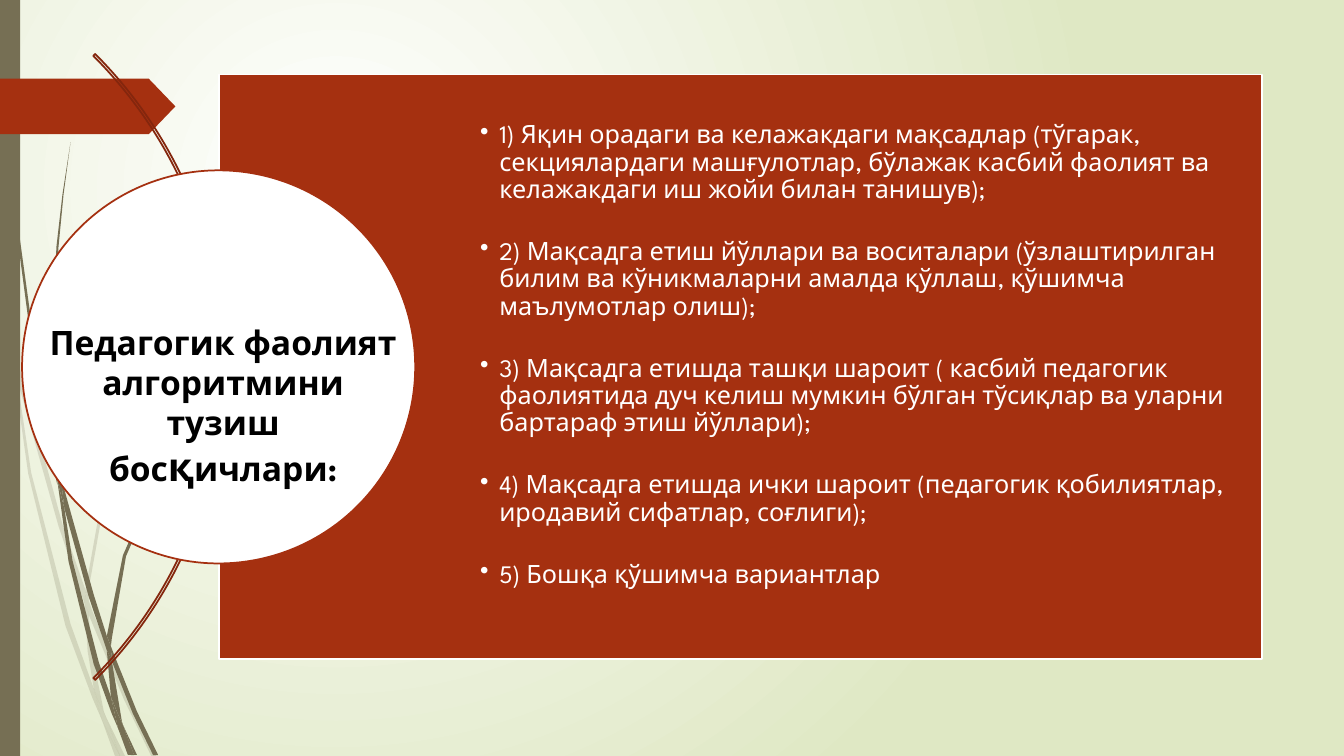
from pptx import Presentation
from pptx.dml.color import RGBColor as Rgb
from pptx.enum.shapes import MSO_SHAPE as Kind
from pptx.enum.text import MSO_ANCHOR as Anchor, MSO_AUTO_SIZE as Fit, PP_ALIGN as Align
from pptx.oxml import parse_xml
from pptx.oxml.ns import nsdecls, qn
from pptx.util import Pt

HUES = {"white": "FFFFFF", "black": "000000", "lime": "DFE8C4",
        "olive": "766F54", "rust": "A53010", "dark": "84260D"}
FACE = "League Spartan"

STEPS = [
    "1) Яқин орадаги ва келажакдаги мақсадлар (тўгарак, секциялардаги машғулотлар, бўлажак касбий фаолият ва келажакдаги иш жойи билан танишув);",
    "2) Мақсадга етиш йўллари ва воситалари (ўзлаштирилган билим ва кўникмаларни амалда қўллаш, қўшимча маълумотлар олиш);",
    "3) Мақсадга етишда ташқи шароит ( касбий педагогик фаолиятида дуч келиш мумкин бўлган тўсиқлар ва уларни бартараф этиш йўллари);",
    "4) Мақсадга етишда ички шароит (педагогик қобилиятлар, иродавий сифатлар, соғлиги);",
    "5) Бошқа қўшимча вариантлар",
]
HEAD = [
    [("Педагогик фаолият", 24)],
    [("алгоритмини тузиш", 24)],
    [("бос", 24), ("қ", 28), ("ичлари:", 24)],
]

PALE = [
    [(7.9, 252), (6.5, 231.8), (0, 203), (0, 215.3), (7.2, 247.7)],
    [(41.8, 375.8), (60.5, 431.3), (61.2, 421.9), (44.6, 374.4), (10.1, 248.4), (12.2, 270.7)],
    [(66.2, 437), (63.4, 429.1), (63.4, 439.2), (88.6, 499.7), (108, 540), (111.6, 540), (91.4, 498.2)],
    [(85.7, 540), (89.3, 540), (75.6, 511.9)],
    [(67, 491.8), (50.4, 445.7), (22.3, 337.7), (12.2, 270.7), (7.9, 252), (20.2, 338.4),
     (46.8, 447.1), (66.2, 499), (72.7, 514.1), (71.3, 509)],
    [(60.5, 431.3), (62.6, 465.1), (67, 491.8), (69.1, 498.2), (75.6, 511.9), (74.2, 508.3),
     (65.5, 465.1), (63.4, 439.2), (63.4, 437.8)],
    [(63.4, 420.5), (79.2, 332.6), (115.2, 251.3), (164.9, 176.4), (193, 142.6), (208.8, 126),
     (224.6, 110.9), (224.6, 110.2), (208.1, 126), (193, 141.8), (164.2, 175.7), (113.8, 250.6),
     (77, 331.9), (61.2, 420.5), (61.2, 421.9), (63.4, 429.1)],
    [(72.7, 514.1), (82.1, 540), (85.7, 540)],
    [(63.4, 437.8), (63.4, 439.2), (63.4, 429.1), (61.2, 421.9), (60.5, 431.3)],
    [(69.1, 498.2), (67, 491.8), (71.3, 509), (72.7, 514.1), (85.7, 540), (75.6, 511.9)],
]
DEEP = [
    [(5, 79.2), (12.2, 167.8), (23.8, 255.6), (40.3, 343.4), (41, 346.3), (39.6, 329),
     (39.6, 326.2), (25.9, 255.6), (13.7, 167), (5.8, 78.5), (3.6, 34.6), (2.9, 0), (2.2, 0), (2.9, 34.6)],
    [(63.4, 426.2), (76.3, 464.4), (76.3, 454.3), (67, 424.8), (43.2, 339.8), (46.1, 363.6)],
    [(81.4, 467.3), (79.2, 461.5), (79.9, 472.3), (95, 509.8), (109.4, 539.3), (113, 539.3), (97.9, 508.3)],
    [(79.2, 497.5), (70.6, 473), (51.8, 400.3), (46.1, 363.6), (41, 343.4), (49, 401),
     (67, 474.5), (79.9, 509.8), (84.2, 519.8), (83.5, 516.2)],
    [(43.2, 339.8), (41.8, 326.2), (38.9, 251.3), (41.8, 176.4), (45.4, 139), (50.4, 101.5),
     (44.6, 139), (40.3, 176.4), (37.4, 251.3), (39.6, 323.3)],
    [(95.8, 539.3), (97.9, 539.3), (87.8, 517.7)],
    [(41, 343.4), (46.1, 363.6), (43.2, 339.8), (39.6, 323.3), (39.6, 326.2)],
    [(79.9, 455.8), (90, 397.4), (113.8, 342.7), (147.6, 292.3), (166.3, 269.3), (176.4, 258.5),
     (187.9, 247.7), (187.2, 247.7), (176.4, 257.8), (166.3, 268.6), (146.9, 291.6), (112.3, 341.3),
     (87.8, 396.7), (76.3, 454.3), (79.2, 461.5)],
    [(84.2, 519.8), (91.4, 539.3), (94.3, 539.3)],
    [(76.3, 464.4), (79.2, 497.5), (83.5, 508.3), (87.8, 517.7), (87.1, 515.5), (79.9, 472.3), (78.5, 468.7)],
    [(76.3, 464.4), (78.5, 468.7), (79.9, 472.3), (79.2, 461.5), (76.3, 454.3)],
    [(83.5, 508.3), (79.2, 497.5), (83.5, 516.2), (84.2, 519.8), (93.6, 539.3), (95.8, 539.3), (87.8, 517.7)],
]


def tint(name):
    return Rgb.from_string(HUES[name])


def style(shape, fill=None, line=None):
    shape.shadow.inherit = False
    if fill:
        shape.fill.solid()
        shape.fill.fore_color.rgb = tint(fill)
    else:
        shape.fill.background()
    if line:
        shape.line.color.rgb = tint(line)
        shape.line.width = Pt(1.25)
    else:
        shape.line.fill.background()
    return shape


def add(slide, kind, box, fill=None, line=None):
    return style(slide.shapes.add_shape(kind, *map(Pt, box)), fill, line)


def ground(slide):
    fill = slide.background.fill
    fill.gradient()
    for stop, name in zip(fill.gradient_stops, ("white", "lime")):
        stop.color.rgb = tint(name)
    grad = slide.element.find(".//" + qn("a:gradFill"))
    grad.remove(grad.find(qn("a:lin")))
    grad.append(parse_xml(
        f'<a:path {nsdecls("a")} path="circle"><a:fillToRect l="50000" t="50000" '
        'r="100000" b="100000"/></a:path>'))


def wisps(slide, box, blades, alpha=None):
    left, top = box[:2]
    for blade in blades:
        spots = [(Pt(left + x), Pt(top + y)) for x, y in blade]
        pen = slide.shapes.build_freeform(*spots[0])
        pen.add_line_segments(spots[1:], close=True)
        shape = style(pen.convert_to_shape(), "olive")
        if alpha:
            hue = shape.element.spPr.find(".//" + qn("a:srgbClr"))
            hue.append(parse_xml(f'<a:alpha {nsdecls("a")} val="{alpha * 1000}"/>'))


def edge(slide, box):
    left, top, width, height = box
    wisps(slide, box, PALE, 20)
    wisps(slide, box, DEEP)
    add(slide, Kind.RECTANGLE, (left, top, 14.4, height), "olive")
    flag = add(slide, Kind.PENTAGON, (left, top + 56.2, width, 39.6), "rust")
    flag.adjustments[0] = 0.48


def panel(slide, box):
    shape = add(slide, Kind.RECTANGLE, box, "rust", "white")
    frame = shape.text_frame
    frame.word_wrap = True
    frame.vertical_anchor = Anchor.TOP
    frame.margin_left, frame.margin_top = Pt(186.5), Pt(34)
    frame.margin_right = frame.margin_bottom = Pt(4.3)
    for i, step in enumerate(STEPS):
        para = frame.add_paragraph() if i else frame.paragraphs[0]
        para.text = step
        para.alignment = Align.LEFT
        para.line_spacing = 0.9
        para.space_after = Pt(25)
        para.font.size = Pt(18)
        para.font.name = FACE
        para.font.color.rgb = tint("white")
        props = para._p.get_or_add_pPr()
        props.set("marL", str(Pt(13.7)))
        props.set("indent", str(-Pt(13.7)))
        mark = parse_xml(f'<a:buChar {nsdecls("a")} char="•"/>')
        props.find(qn("a:spcAft")).addnext(mark)


def badge(slide, box):
    left, top, width, height = box
    disc = add(slide, Kind.OVAL, box, "white", "rust")
    title = slide.shapes.title
    title.left, title.top = Pt(left + 11.5), Pt(top + 104.4)
    title.width, title.height = Pt(width - 16.6), Pt(123.8)
    disc.element.addnext(title.element)
    frame = title.text_frame
    frame.word_wrap = True
    frame.auto_size = Fit.NONE
    frame.vertical_anchor = Anchor.TOP
    for i, parts in enumerate(HEAD):
        para = frame.add_paragraph() if i else frame.paragraphs[0]
        para.alignment = Align.CENTER
        para.font.name = FACE
        para.font.bold = True
        para.font.color.rgb = tint("black")
        for text, size in parts:
            run = para.add_run()
            run.text = text
            run.font.size = Pt(size)


def arc(slide, box):
    shape = add(slide, Kind.BLOCK_ARC, box, line="dark")
    for i, value in enumerate((189, 27, 0.003)):
        shape.adjustments[i] = value


def main():
    deck = Presentation()
    deck.slide_width, deck.slide_height = Pt(960), Pt(540)
    slide = deck.slides.add_slide(deck.slide_layouts[5])
    ground(slide)
    edge(slide, (0, 0, 125.3, 540))
    arc(slide, (-471.6, -54, 632.2, 632.2))
    panel(slide, (156.5, 53.3, 745.2, 417.6))
    badge(slide, (15.8, 121.7, 280.8, 280.8))
    deck.save("out.pptx")


if __name__ == "__main__":
    main()
